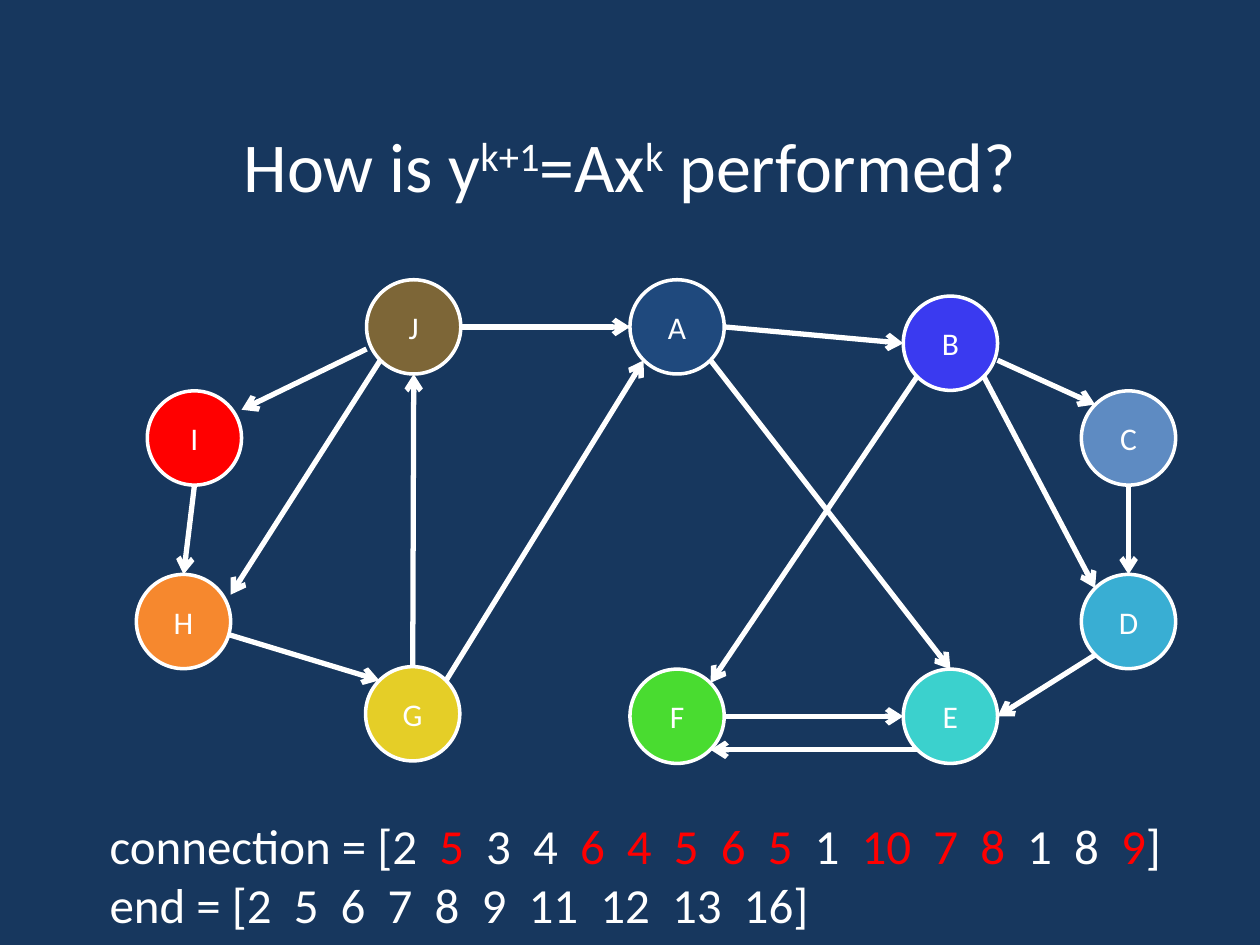
from dataclasses import dataclass

from lxml.etree import SubElement
from pptx import Presentation
from pptx.dml.color import RGBColor
from pptx.enum.shapes import MSO_CONNECTOR, MSO_SHAPE
from pptx.enum.text import MSO_ANCHOR, PP_ALIGN
from pptx.oxml.ns import qn
from pptx.util import Cm, Pt


@dataclass(frozen=True)
class Theme:
    font: str = "Calibri"
    back: str = "17375E"
    white: str = "FFFFFF"
    red: str = "FF0000"
    title: int = 40
    body: int = 28
    node: int = 18
    rim: int = 2
    edge: int = 3


THEME = Theme()
RADIUS = 0.95

# Node name: centre x, centre y (cm), fill
NODES = {
    "J": (8.34, 6.59, "7D6637"),
    "A": (13.65, 6.59, "1F497D"),
    "B": (19.16, 6.92, "3A3AF0"),
    "I": (3.92, 8.83, "FF0000"),
    "C": (22.75, 8.83, "5E8BC2"),
    "D": (22.75, 12.53, "39AED3"),
    "H": (3.7, 12.53, "F6882E"),
    "G": (8.32, 14.39, "E5CE27"),
    "F": (13.65, 14.44, "49DC30"),
    "E": (19.16, 14.44, "3BD1CD"),
}

# Points on a node, in radii from its centre
TOP, LEFT, BASE, RIGHT = (0, -1), (-1, 0), (0, 1), (1, 0)
NW, NE, SW, SE = (-0.71, -0.71), (0.71, -0.71), (-0.71, 0.71), (0.71, 0.71)

# From node, its point, to node, its point
EDGES = [
    ("J", RIGHT, "A", LEFT),
    ("H", (0.97, 0.28), "G", NW),
    ("I", BASE, "H", TOP),
    ("J", SW, "H", (1, -0.57)),
    ("J", (-1, 0.47), "I", (1, -0.6)),
    ("A", SE, "E", TOP),
    ("A", RIGHT, "B", LEFT),
    ("F", RIGHT, "E", LEFT),
    ("B", (1, 0.36), "C", NW),
    ("C", BASE, "D", TOP),
    ("G", NE, "A", SW),
    ("B", SW, "F", NE),
    ("D", SW, "E", RIGHT),
    ("E", SW, "F", SE),
    ("B", SE, "D", NW),
    ("G", TOP, "J", BASE),
]


def rgb(code):
    return RGBColor.from_string(code)


def add_run(para, text, size, color=THEME.white, base=0):
    run = para.add_run()
    run.text = text
    run.font.name = THEME.font
    run.font.size = Pt(size)
    run.font.color.rgb = rgb(color)
    if base:
        run.font._element.set("baseline", str(base * 1000))


def add_box(slide, left, top, width, height, wrap):
    box = slide.shapes.add_textbox(Cm(left), Cm(top), Cm(width), Cm(height))
    box.text_frame.word_wrap = wrap
    return box.text_frame


def add_title(slide):
    frame = add_box(slide, 1.9, 1.27, 21.6, 4.08, True)
    frame.vertical_anchor = MSO_ANCHOR.MIDDLE
    para = frame.paragraphs[0]
    para.alignment = PP_ALIGN.CENTER
    for text, base in [("How is y", 0), ("k+1", 30), ("=Ax", 0),
                       ("k", 30), (" performed?", 0)]:
        add_run(para, text, THEME.title, base=base)


def add_node(slide, name):
    x, y, fill = NODES[name]
    node = slide.shapes.add_shape(
        MSO_SHAPE.OVAL, Cm(x - RADIUS), Cm(y - RADIUS),
        Cm(2 * RADIUS), Cm(2 * RADIUS))
    node.shadow.inherit = False
    node.fill.solid()
    node.fill.fore_color.rgb = rgb(fill)
    node.line.color.rgb = rgb(THEME.white)
    node.line.width = Pt(THEME.rim)
    node.text_frame.vertical_anchor = MSO_ANCHOR.MIDDLE
    para = node.text_frame.paragraphs[0]
    para.alignment = PP_ALIGN.CENTER
    add_run(para, name, THEME.node)
    return node


def spot(name, point):
    x, y, _ = NODES[name]
    return Cm(x + RADIUS * point[0]), Cm(y + RADIUS * point[1])


def add_edge(slide, nodes, start, exit, end, entry):
    edge = slide.shapes.add_connector(
        MSO_CONNECTOR.STRAIGHT, *spot(start, exit), *spot(end, entry))
    edge.line.color.rgb = rgb(THEME.white)
    edge.line.width = Pt(THEME.edge)
    # Open arrowhead, no shadow
    SubElement(edge.line._get_or_add_ln(), qn("a:tailEnd"), type="arrow")
    SubElement(edge._element.spPr, qn("a:effectLst"))
    # Only the top site has the same index on ovals and rectangles
    if exit == TOP:
        edge.begin_connect(nodes[start], 0)
    if entry == TOP:
        edge.end_connect(nodes[end], 0)


def add_lists(slide):
    frame = add_box(slide, 1.96, 16.31, 22.05, 2.64, False)
    para = frame.paragraphs[0]
    # White and red runs take turns
    parts = ["connection = [2  ", "5", "  3  4  ", "6  4  5  6  5  ",
             "1  ", "10  7  8", "  1  8  ", "9", "]"]
    for i, text in enumerate(parts):
        add_run(para, text, THEME.body, THEME.red if i % 2 else THEME.white)
    add_run(frame.add_paragraph(),
            "end = [2  5  6  7  8  9  11  12  13  16]", THEME.body)


def main():
    deck = Presentation()
    deck.slide_width, deck.slide_height = Cm(25.4), Cm(19.05)
    slide = deck.slides.add_slide(deck.slide_layouts[6])
    slide.background.fill.solid()
    slide.background.fill.fore_color.rgb = rgb(THEME.back)

    add_title(slide)
    # Graph
    nodes = {name: add_node(slide, name) for name in NODES}
    for edge in EDGES:
        add_edge(slide, nodes, *edge)
    # Arrays below the graph
    add_lists(slide)
    deck.save("out.pptx")


if __name__ == "__main__":
    main()
